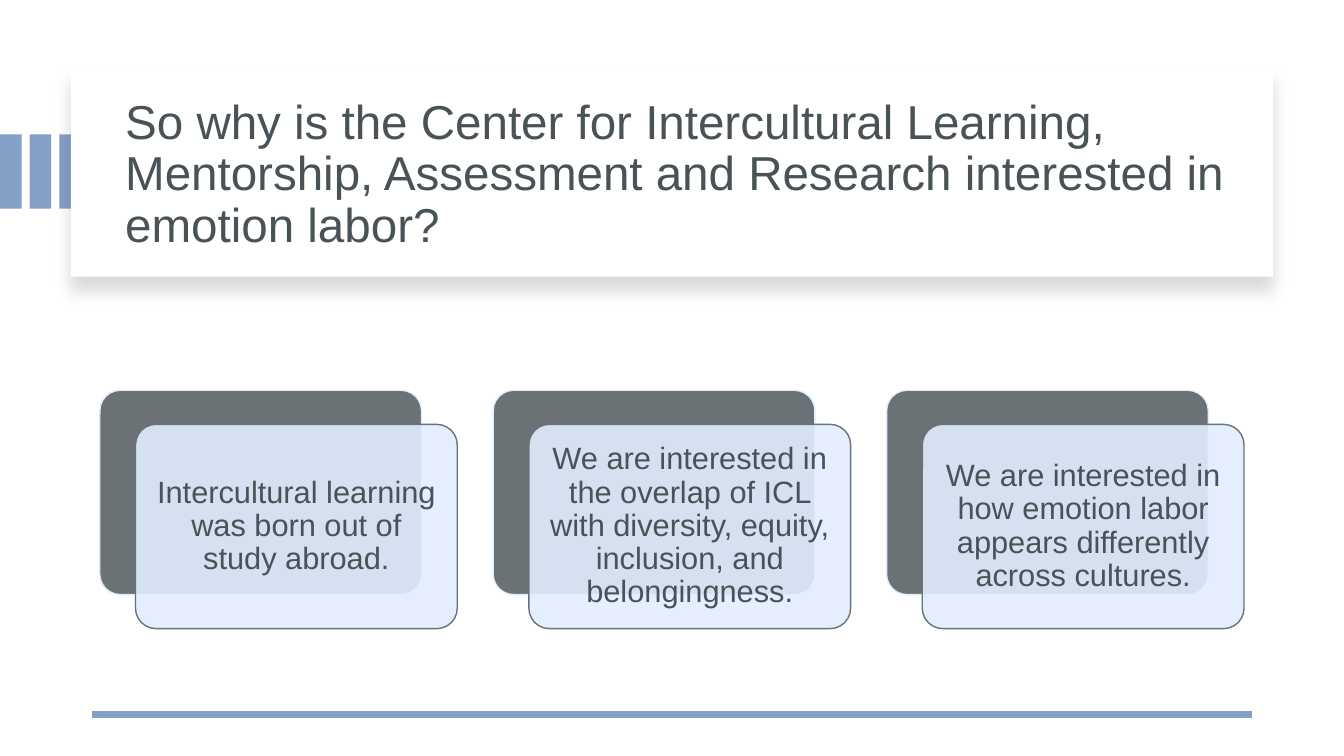
import pptx
import pptx.dml.color
import pptx.enum.shapes
import pptx.enum.text
import pptx.oxml
import pptx.oxml.ns
import pptx.util

Pt = pptx.util.Pt
Shape = pptx.enum.shapes.MSO_SHAPE
Align = pptx.enum.text.PP_ALIGN
qn = pptx.oxml.ns.qn
NS = pptx.oxml.ns.nsdecls("a")


def color(hex):
    return pptx.dml.color.RGBColor.from_string(hex)


class Deck:
    font, ink = "Arial", "495357"
    blue, pale, gray, white = "85A0C7", "E1EDFF", "6A7275", "FFFFFF"

    def __init__(self, slide):
        self.shapes = slide.shapes

    def box(self, kind, x, y, w, h, fill, edge=None):
        box = self.shapes.add_shape(kind, Pt(x), Pt(y), Pt(w), Pt(h))
        box.shadow.inherit = False
        box.fill.solid()
        box.fill.fore_color.rgb = color(fill)
        if edge:
            box.line.color.rgb = color(edge)
            box.line.width = Pt(1)
        else:
            box.line.fill.background()
        return box

    def card(self, x, y, w, h, fill, edge):
        card = self.box(Shape.ROUNDED_RECTANGLE, x, y, w, h, fill, edge)
        card.adjustments[0] = 0.1
        return card

    def fade(self, box, share):
        tint = box.fill._xPr.find(qn("a:solidFill"))[0]
        tint.append(pptx.oxml.parse_xml(f'<a:alpha {NS} val="{share * 1000}"/>'))

    def shade(self, box):
        # Soft black shadow straight below the panel
        box._element.spPr.find(qn("a:effectLst")).append(pptx.oxml.parse_xml(
            f'<a:outerShdw {NS} blurRad="{Pt(11)}" dist="{Pt(10)}" dir="5400000"'
            ' algn="t" rotWithShape="0"><a:srgbClr val="000000">'
            '<a:alpha val="15000"/></a:srgbClr></a:outerShdw>'))

    def text(self, box, words, size, align, side, edge):
        frame = box.text_frame
        frame.word_wrap = True
        frame.vertical_anchor = pptx.enum.text.MSO_ANCHOR.MIDDLE
        frame.margin_left = frame.margin_right = Pt(side)
        frame.margin_top = frame.margin_bottom = Pt(edge)
        frame.text = words
        para = frame.paragraphs[0]
        para.alignment = align
        para.line_spacing = 0.9
        for run in para.runs:
            run.font.name = self.font
            run.font.size = Pt(size)
            run.font.color.rgb = color(self.ink)

    def title(self, x, y, w, h, words):
        box = self.shapes.add_textbox(Pt(x), Pt(y), Pt(w), Pt(h))
        self.text(box, words, 34, Align.LEFT, 7.2, 3.6)

    def rule(self, x, y, end):
        line = self.shapes.add_connector(
            pptx.enum.shapes.MSO_CONNECTOR.STRAIGHT, Pt(x), Pt(y), Pt(end), Pt(y))
        line.line.color.rgb = color(self.blue)
        line.line.width = Pt(4.5)
        line._element.spPr.append(pptx.oxml.parse_xml(f"<a:effectLst {NS}/>"))


def main():
    show = pptx.Presentation()
    show.slide_width, show.slide_height = Pt(960), Pt(540)
    deck = Deck(show.slides.add_slide(show.slide_layouts[6]))

    # Bars at the left edge
    for i in range(3):
        deck.box(Shape.RECTANGLE, i * 21.2, 95.9, 15.4, 53.2, deck.blue)

    # Title panel
    panel = deck.box(Shape.RECTANGLE, 50.6, 48.4, 858.8, 149.2, deck.white)
    deck.shade(panel)
    deck.title(82.4, 64, 801.4, 122.4,
               "So why is the Center for Intercultural Learning, Mentorship, "
               "Assessment and Research interested in emotion labor?")

    # Footer rule
    deck.rule(66, 510.4, 894)

    # Reasons: a dark card behind a pale one
    reasons = [
        "Intercultural learning was born out of study abroad.",
        "We are interested in the overlap of ICL with diversity, equity, "
        "inclusion, and belongingness.",
        "We are interested in how emotion labor appears differently "
        "across cultures.",
    ]
    top, wide, high = 278.8, 229.8, 145.9
    for i, words in enumerate(reasons):
        x = 71.3 + i * 281
        deck.card(x, top, wide, high, deck.gray, deck.pale)
        front = deck.card(x + 25.5, top + 24.3, wide, high, deck.pale, deck.gray)
        deck.fade(front, 90)
        deck.text(front, words, 22, Align.CENTER, 6.6, 6.6)

    show.save("out.pptx")


if __name__ == "__main__":
    main()
